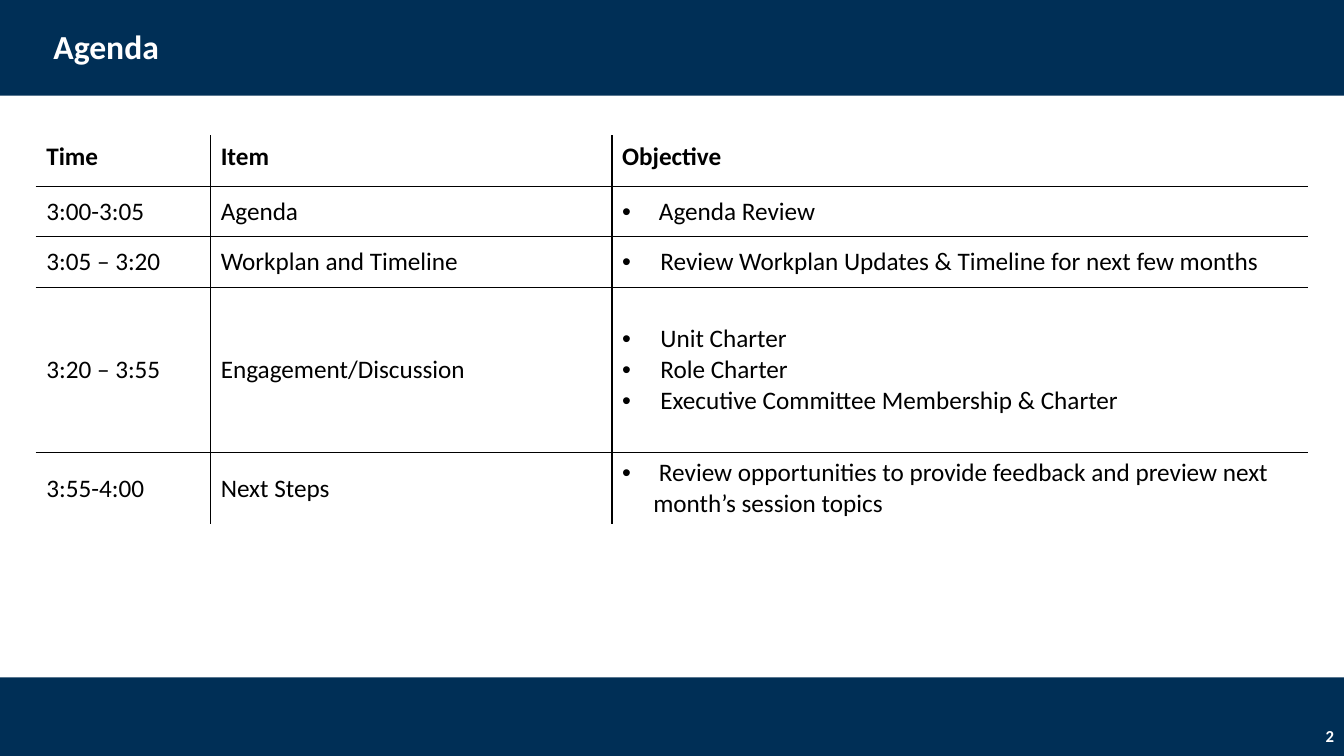
from lxml import etree
from pptx import Presentation, util as u
from pptx.dml.color import RGBColor
from pptx.enum import shapes, text
from pptx.oxml import ns

COLS, ROWS = 133.3, 75  # square grid, ten units to the inch
HUES = {"navy": "002F56", "white": "FFFFFF", "black": "000000"}
LINE = u.Pt(1)
WIDTHS = [17.3, 39.8, 69]
HEIGHTS = [5, 5, 5, 16.4, 7]
WIDE, TIGHT = 3.8, 3.1  # bullet indents
AGENDA = [
    ("Time", "Item", ["Objective"], 0),
    ("3:00-3:05", "Agenda", [" Agenda Review"], TIGHT),
    ("3:05 – 3:20", "Workplan and Timeline",
     ["Review Workplan Updates & Timeline for next few months"], WIDE),
    ("3:20 – 3:55", "Engagement/Discussion",
     ["Unit Charter", "Role Charter", "Executive Committee Membership & Charter"], WIDE),
    ("3:55-4:00", "Next Steps",
     [" Review opportunities to provide feedback and preview next month’s session topics"], TIGHT),
]


def grid(size):
    return u.Inches(size / 10)


def apply(item, values):
    for name, value in values.items():
        setattr(item, name, value)


class Deck:
    def __init__(self):
        self.show = Presentation()
        apply(self.show, {"slide_width": grid(COLS), "slide_height": grid(ROWS)})
        self.slide = self.show.slides.add_slide(self.show.slide_layouts[5])
        self.style = {"name": "Calibri", "size": u.Pt(18), "bold": False}

    def hue(self, name):
        return RGBColor.from_string(HUES[name])

    def words(self, frame, lines, hue, align=text.PP_ALIGN.LEFT, indent=0, **font):
        frame.text = "\n".join(lines)
        for para in frame.paragraphs:
            if indent:
                self.bullet(para, indent)
            para.alignment = align
            for run in para.runs:
                apply(run.font, {**self.style, **font})
                run.font.color.rgb = self.hue(hue)

    def bullet(self, para, indent):
        props = para._p.get_or_add_pPr()
        props.set("marL", str(grid(indent)))
        props.set("indent", str(-grid(indent)))
        etree.SubElement(props, ns.qn("a:buFont"), typeface="Arial")
        etree.SubElement(props, ns.qn("a:buChar"), char="•")

    def band(self, top, height):
        bar = self.slide.shapes.add_shape(
            shapes.MSO_SHAPE.RECTANGLE, 0, grid(top), grid(COLS), grid(height))
        bar.shadow.inherit = False
        bar.fill.solid()
        bar.fill.fore_color.rgb = self.hue("navy")
        bar.line.fill.background()

    def title(self, line, left, top, width, height):
        head = self.slide.shapes.title
        apply(head, {"left": grid(left), "top": grid(top),
                     "width": grid(width), "height": grid(height)})
        apply(head.text_frame, {"vertical_anchor": text.MSO_ANCHOR.MIDDLE,
                                "auto_size": text.MSO_AUTO_SIZE.NONE})
        self.words(head.text_frame, [line], "white", size=u.Pt(24), bold=True)
        head.text_frame.paragraphs[0].line_spacing = 0.9
        tree = self.slide.shapes._spTree
        tree.append(head._element)  # bring in front of the bands

    def label(self, line, left, top, width, height):
        box = self.slide.shapes.add_textbox(
            grid(left), grid(top), grid(width), grid(height))
        apply(box.text_frame, {"word_wrap": True,
                               "vertical_anchor": text.MSO_ANCHOR.MIDDLE})
        self.words(box.text_frame, [line], "white", text.PP_ALIGN.RIGHT,
                   size=u.Pt(12), bold=True)

    def rule(self, cell, sides):
        """Draw the cell's borders on the given sides, in L, R, T, B order."""
        props = cell._tc.get_or_add_tcPr()
        for side in sides:
            line = etree.SubElement(props, ns.qn("a:ln" + side), w=str(LINE))
            fill = etree.SubElement(line, ns.qn("a:solidFill"))
            etree.SubElement(fill, ns.qn("a:srgbClr"), val=HUES["black"])

    def table(self, rows, left, top):
        plan = self.slide.shapes.add_table(
            len(rows), len(WIDTHS), grid(left), grid(top),
            grid(sum(WIDTHS)), grid(sum(HEIGHTS))).table
        apply(plan, {"first_row": False, "horz_banding": False})
        for col, width in zip(plan.columns, WIDTHS):
            col.width = grid(width)
        for r, (time, item, goals, indent) in enumerate(rows):
            plan.rows[r].height = grid(HEIGHTS[r])
            for c, lines in enumerate(([time], [item], goals)):
                cell = plan.cell(r, c)
                inner = {"L": c > 0, "R": c < len(WIDTHS) - 1,
                         "T": r > 0, "B": r < len(rows) - 1}
                self.rule(cell, [side for side in inner if inner[side]])
                cell.fill.solid()
                cell.fill.fore_color.rgb = self.hue("white")
                cell.vertical_anchor = text.MSO_ANCHOR.MIDDLE if r else text.MSO_ANCHOR.TOP
                self.words(cell.text_frame, lines, "black",
                           indent=indent if c == 2 else 0, bold=r == 0)


def main():
    deck = Deck()
    deck.band(0, 9.5)
    deck.band(67.2, 7.8)
    deck.table(AGENDA, 3.6, 13.5)
    deck.label("2", 103.3, 71, 30, 4)
    deck.title("Agenda", 4.3, 1.1, 115, 7.4)
    deck.show.save("out.pptx")


if __name__ == "__main__":
    main()
